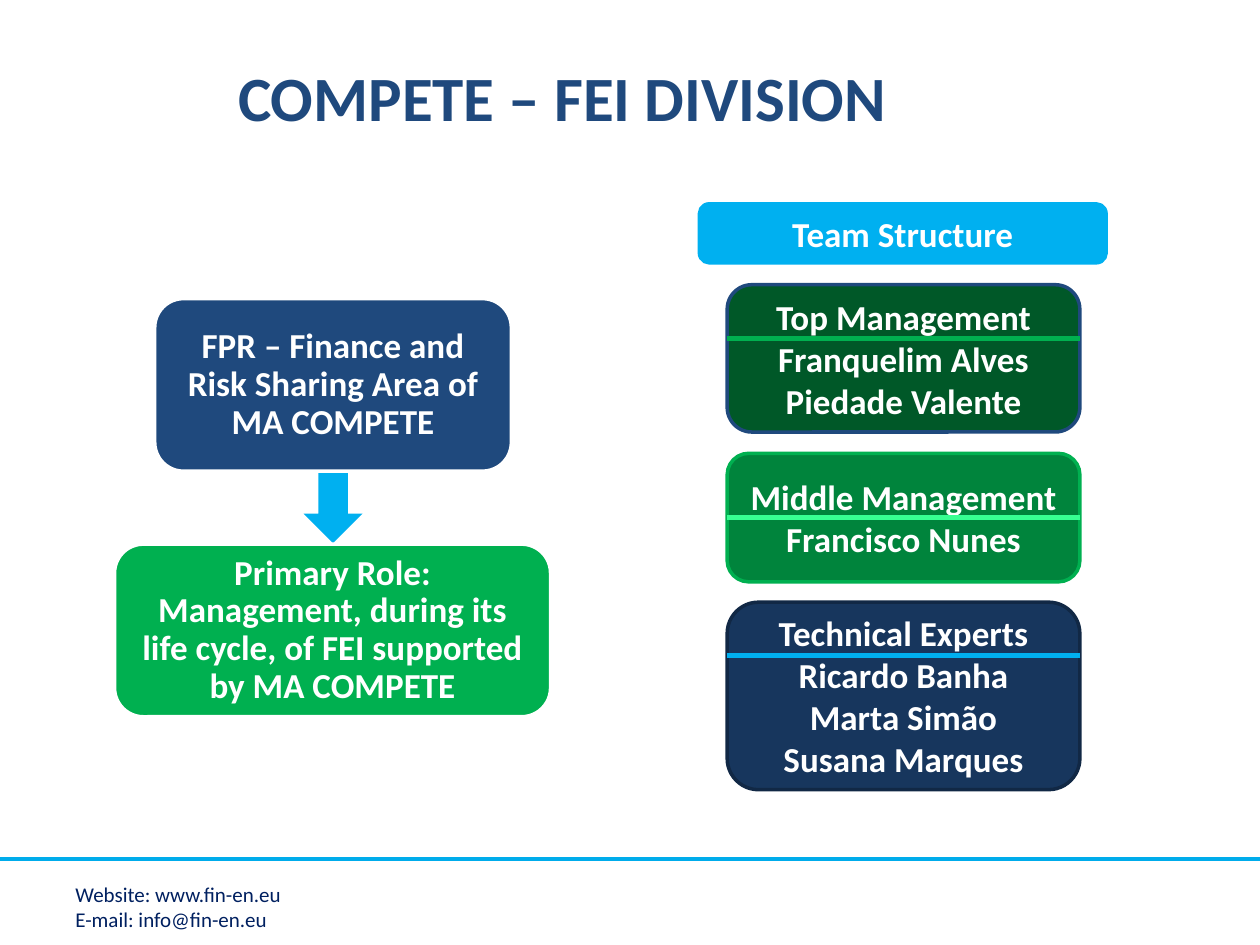
from dataclasses import dataclass

from pptx import Presentation
from pptx.dml.color import RGBColor
from pptx.enum.shapes import MSO_CONNECTOR, MSO_SHAPE
from pptx.enum.text import MSO_ANCHOR, PP_ALIGN
from pptx.oxml.ns import qn
from pptx.util import Cm, Pt

ROUND = MSO_SHAPE.ROUNDED_RECTANGLE
ARROW = MSO_SHAPE.DOWN_ARROW
STRAIGHT = MSO_CONNECTOR.STRAIGHT
MIDDLE = MSO_ANCHOR.MIDDLE
TOP = MSO_ANCHOR.TOP
CENTER = PP_ALIGN.CENTER
LEFT = PP_ALIGN.LEFT

FONT = "Calibri"
COLORS = {
    "white": "FFFFFF",
    "navy": "1F497D",
    "ink": "002060",
    "sky": "00B0F0",
    "rule": "00ACEB",
    "green": "00B050",
    "forest": "005828",
    "leaf": "00843C",
    "mint": "37FF92",
    "deep": "17365D",
    "night": "112845",
}

TEAM_X = 14.66
TEAM_W = 7.11


@dataclass
class Box:
    left: float
    top: float
    width: float
    height: float
    fill: str
    line: str
    lines: list[str]
    inset: float = 0.25
    pitch: float = 1.0


@dataclass
class Team:
    top: float
    height: float
    fill: str
    line: str
    rule: float
    tint: str
    lines: list[str]


ROLES = [
    Box(2.31, 10.97, 8.79, 3.48, "green", "white",
        ["Primary Role: Management, during its life cycle, "
         "of FEI supported by MA COMPETE"], 0.2, 0.9),
    Box(3.12, 6.02, 7.19, 3.48, "navy", "white",
        ["FPR – Finance and Risk Sharing Area of MA COMPETE"], 0.2, 0.9),
]
HEADER = Box(14.1, 4.11, 8.2, 1.19, "sky", "sky", ["Team Structure"])
TEAMS = [
    Team(5.74, 2.97, "forest", "navy", 6.83, "green",
         ["Top Management", "Franquelim Alves", "Piedade Valente"]),
    Team(9.14, 2.59, "leaf", "green", 10.44, "mint",
         ["Middle Management", "Francisco Nunes"]),
    Team(12.14, 3.78, "deep", "night", 13.21, "sky",
         ["Technical Experts", "Ricardo Banha", "Marta Simão",
          "Susana Marques"]),
]


def color(name: str) -> RGBColor:
    return RGBColor.from_string(COLORS[name])


def write(frame, lines: list[str], size: int, tint: str, bold: bool,
          align, anchor, pitch: float = 1.0) -> None:
    frame.word_wrap = True
    frame.vertical_anchor = anchor
    for i, line in enumerate(lines):
        para = frame.paragraphs[0] if i == 0 else frame.add_paragraph()
        para.text = line
        para.alignment = align
        para.line_spacing = pitch
        para.font.name = FONT
        para.font.size = Pt(size)
        para.font.bold = bold
        para.font.color.rgb = color(tint)


def add_shape(slide, kind, left: float, top: float, width: float,
              height: float, fill: str):
    shape = slide.shapes.add_shape(
        kind, Cm(left), Cm(top), Cm(width), Cm(height))
    shape.shadow.inherit = False
    shape.fill.solid()
    shape.fill.fore_color.rgb = color(fill)
    return shape


def add_box(slide, box: Box):
    shape = add_shape(slide, ROUND, box.left, box.top, box.width,
                      box.height, box.fill)
    shape.line.color.rgb = color(box.line)
    shape.line.width = Pt(2)
    frame = shape.text_frame
    frame.margin_left = frame.margin_right = Cm(box.inset)
    write(frame, box.lines, 20, "white", True, CENTER, MIDDLE, box.pitch)
    return shape


def add_line(slide, left: float, right: float, y: float, tint: str,
             width: float):
    line = slide.shapes.add_connector(
        STRAIGHT, Cm(left), Cm(y), Cm(right), Cm(y))
    line.line.color.rgb = color(tint)
    line.line.width = Pt(width)
    props = line._element.spPr
    props.append(props.makeelement(qn("a:effectLst"), {}))
    return line


def add_text(slide, left: float, top: float, width: float, height: float,
             lines: list[str], size: int, tint: str, bold: bool,
             anchor) -> None:
    box = slide.shapes.add_textbox(
        Cm(left), Cm(top), Cm(width), Cm(height))
    write(box.text_frame, lines, size, tint, bold, LEFT, anchor)


def add_teams(slide) -> None:
    shapes = [
        add_box(slide, Box(TEAM_X, team.top, TEAM_W, team.height,
                           team.fill, team.line, team.lines))
        for team in TEAMS
    ]
    for team, shape in zip(TEAMS, shapes):
        line = add_line(slide, TEAM_X, TEAM_X + TEAM_W, team.rule,
                        team.tint, 3)
        if abs(team.top + team.height / 2 - team.rule) < 0.05:
            line.begin_connect(shape, 1)
            line.end_connect(shape, 3)


def main() -> None:
    deck = Presentation()
    deck.slide_width = Cm(25.4)
    deck.slide_height = Cm(19.05)
    slide = deck.slides.add_slide(deck.slide_layouts[6])

    add_line(slide, 0, 25.4, 17.32, "rule", 2.25)
    add_text(slide, 1.27, 17.65, 7.24, 1.02,
             ["Website: www.fin-en.eu", "E-mail: info@fin-en.eu"],
             12, "ink", False, TOP)
    add_text(slide, 4.55, 0.91, 19.81, 2.08, ["COMPETE – FEI DIVISION"],
             36, "navy", True, MIDDLE)

    arrow = add_shape(slide, ARROW, 6.12, 9.5, 1.19, 1.45, "sky")
    arrow.line.fill.background()
    for box in [*ROLES, HEADER]:
        add_box(slide, box)
    add_teams(slide)
    deck.save("out.pptx")


if __name__ == "__main__":
    main()
